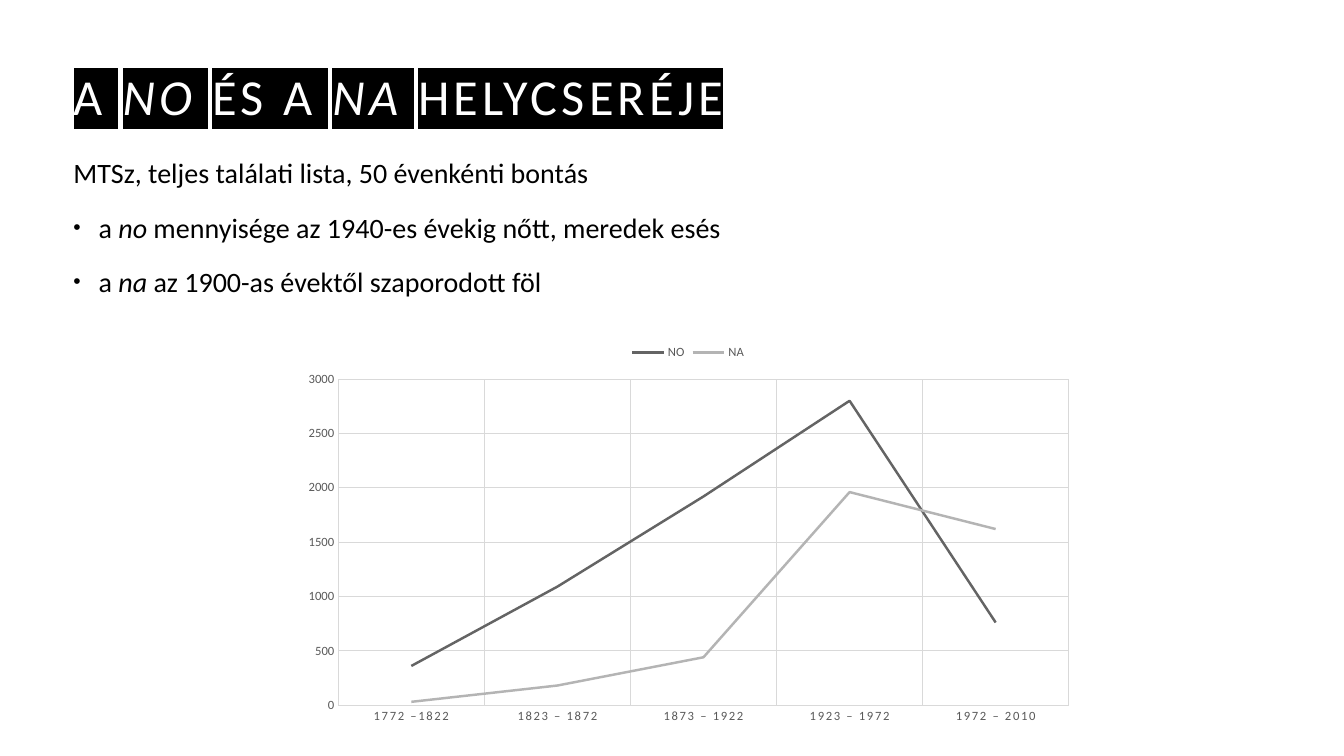
import pptx
import pptx.chart.data
import pptx.dml.color
import pptx.enum.chart
import pptx.enum.text
import pptx.oxml
import pptx.oxml.ns
import pptx.util
from pptx.util import Inches

RGBColor = pptx.dml.color.RGBColor
BLACK = RGBColor(0x00, 0x00, 0x00)
WHITE = RGBColor(0xFF, 0xFF, 0xFF)
LABEL_GRAY = RGBColor(0x59, 0x59, 0x59)
GRID_GRAY = RGBColor(0xD9, 0xD9, 0xD9)
NO_GRAY = RGBColor(0x64, 0x64, 0x64)
NA_GRAY = RGBColor(0xB4, 0xB4, 0xB4)
FONT = "Calibri"

TITLE = [("A ", False), ("NO ", True), ("ÉS A ", False), ("NA ", True),
         ("HELYCSERÉJE", False)]
INTRO = [("MTSz, teljes találati lista, 50 évenkénti bontás", False)]
POINTS = [
    [("a ", False), ("no", True),
     (" mennyisége az 1940-es évekig nőtt, meredek esés", False)],
    [("a ", False), ("na", True), (" az 1900-as évektől szaporodott föl", False)],
]
PERIODS = ["1772 –1822", "1823 – 1872", "1873 – 1922", "1923 – 1972", "1972 – 2010"]
SERIES = [("NO", [360, 1090, 1920, 2800, 760], NO_GRAY),
          ("NA", [30, 180, 440, 1960, 1620], NA_GRAY)]


def set_all(obj, **values):
    for name, value in values.items():
        setattr(obj, name, value)


def element(xml):
    return pptx.oxml.parse_xml(xml.replace("NS", pptx.oxml.ns.nsdecls("a", "c"), 1))


def format_font(font, size, color, **values):
    set_all(font, name=FONT, size=pptx.util.Pt(size), **values)
    font.color.rgb = color


def format_line(line, color, width):
    line.color.rgb = color
    line.width = pptx.util.Pt(width)


def add_runs(p, parts, size, color):
    set_all(p, line_spacing=1.2, alignment=pptx.enum.text.PP_ALIGN.LEFT)
    for text, italic in parts:
        r = p.add_run()
        r.text = text
        format_font(r.font, size, color, italic=italic, bold=False)


def add_bullet(p):
    pPr = p._p.get_or_add_pPr()
    indent = Inches(0.25)
    pPr.set("marL", str(indent))
    pPr.set("indent", str(-indent))
    for xml in (f'<a:buClr NS><a:srgbClr val="{BLACK}"/></a:buClr>',
                '<a:buSzPct NS val="75000"/>',
                '<a:buFont NS typeface="Arial"/>',
                '<a:buChar NS char="•"/>'):
        pPr.append(element(xml))


def add_title(s, x, y, w, h):
    sp = s.shapes.title
    set_all(sp, left=x, top=y, width=w, height=h)
    tf = sp.text_frame
    set_all(tf, word_wrap=True, margin_bottom=0,
            auto_size=pptx.enum.text.MSO_AUTO_SIZE.NONE,
            vertical_anchor=pptx.enum.text.MSO_ANCHOR.BOTTOM)
    p = tf.paragraphs[0]
    add_runs(p, TITLE, 36, WHITE)
    for r in p.runs:
        rPr = r._r.get_or_add_rPr()
        rPr.set("spc", "300")
        fill = rPr.find(pptx.oxml.ns.qn("a:solidFill"))
        fill.addnext(element(
            f'<a:highlight NS><a:srgbClr val="{BLACK}"/></a:highlight>'))


def add_body(s, x, y, w, h):
    tf = s.shapes.add_textbox(x, y, w, h).text_frame
    tf.word_wrap = True
    add_runs(tf.paragraphs[0], INTRO, 20, BLACK)
    for point in POINTS:
        p = tf.add_paragraph()
        p.space_before = pptx.util.Pt(10)
        add_bullet(p)
        add_runs(p, point, 20, BLACK)


def format_axis(axis):
    none = pptx.enum.chart.XL_TICK_MARK.NONE
    set_all(axis, has_major_gridlines=True, major_tick_mark=none, minor_tick_mark=none)
    format_font(axis.tick_labels.font, 9, LABEL_GRAY)
    format_line(axis.format.line, GRID_GRAY, 0.75)
    format_line(axis.major_gridlines.format.line, GRID_GRAY, 0.75)


def place_plot(chart, x, y, w, h):
    area = chart._chartSpace.chart.plotArea
    for old in area.findall(pptx.oxml.ns.qn("c:layout")):
        area.remove(old)
    sizes = "".join(f'<c:{tag} val="{value}"/>'
                    for tag, value in zip("xywh", (x, y, w, h)))
    area.insert(0, element(
        '<c:layout NS><c:manualLayout><c:layoutTarget val="inner"/>'
        '<c:xMode val="edge"/><c:yMode val="edge"/>'
        f'{sizes}</c:manualLayout></c:layout>'))


def add_line_chart(s, x, y, w, h):
    data = pptx.chart.data.CategoryChartData()
    data.categories = PERIODS
    for name, values, _ in SERIES:
        data.add_series(name, values)
    kind = pptx.enum.chart.XL_CHART_TYPE.LINE
    chart = s.shapes.add_chart(kind, x, y, w, h, data).chart
    set_all(chart, has_title=False, has_legend=True)
    format_font(chart.font, 10, BLACK)
    set_all(chart.legend, include_in_layout=False,
            position=pptx.enum.chart.XL_LEGEND_POSITION.TOP)
    format_font(chart.legend.font, 9, LABEL_GRAY)
    for axis in (chart.category_axis, chart.value_axis):
        format_axis(axis)
    set_all(chart.value_axis, minimum_scale=0, maximum_scale=3000, major_unit=500)
    chart.category_axis.tick_labels.font._element.set("spc", "120")
    plot = chart.plots[0]
    plot.vary_by_categories = False
    for series, (_, _, color) in zip(plot.series, SERIES):
        series.smooth = False
        format_line(series.format.line, color, 1.75)
    place_plot(chart, 0.058, 0.114, 0.923, 0.817)


def main():
    prs = pptx.Presentation()
    set_all(prs, slide_width=Inches(13.33), slide_height=Inches(7.5))
    s = prs.slides.add_slide(prs.slide_layouts[5])
    add_title(s, Inches(0.63), 0, Inches(11.62), Inches(1.25))
    add_body(s, Inches(0.63), Inches(1.43), Inches(12.57), Inches(1.71))
    add_line_chart(s, Inches(2.9), Inches(3.31), Inches(7.85), Inches(3.96))
    prs.save("out.pptx")


if __name__ == "__main__":
    main()
